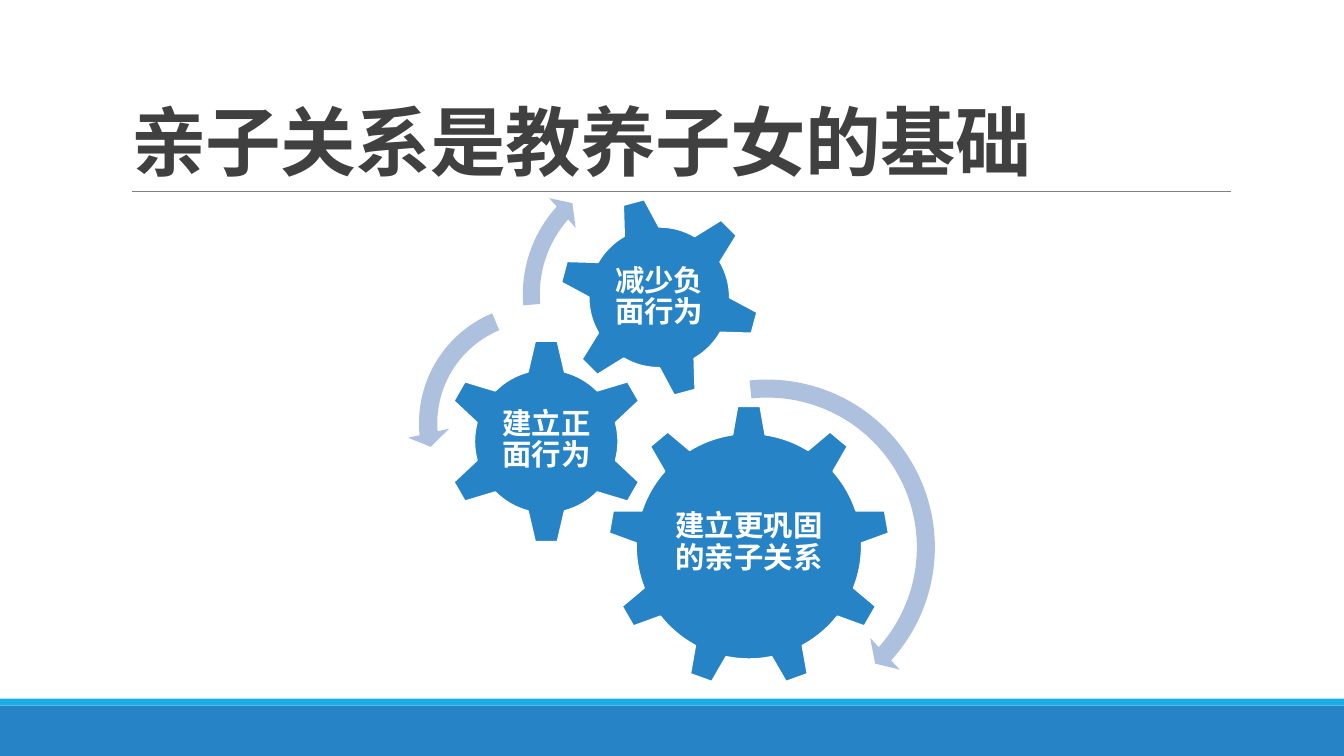
from dataclasses import dataclass

from lxml.etree import SubElement
from pptx import Presentation
from pptx.dml.color import RGBColor as RGB
from pptx.enum.shapes import MSO_CONNECTOR as LINE, MSO_SHAPE as SHAPE
from pptx.enum.text import MSO_ANCHOR as ANCHOR, MSO_AUTO_SIZE as FIT, PP_ALIGN as ALIGN
from pptx.oxml.ns import qn
from pptx.util import Inches, Pt


@dataclass(frozen=True)
class Theme:
    blue: str = "2683C6"
    cyan: str = "1CADE4"
    pale: str = "ADC1DF"
    white: str = "FFFFFF"
    ink: str = "404040"
    rule: str = "808080"
    title_font: str = "Noto Sans CJK SC"
    label_font: str = "Noto Sans CJK JP"
    title_size: float = 54
    label_size: float = 21


T = Theme()
W, H = 13.33, 7.5

# Centre and size in grid units of the diagram box
# kind, centre, size, rotation, label, label size, label shift down
GEARS = [
    (SHAPE.GEAR_9, (3.43, 3.92), 2.8, 0, "建立更巩固的亲子关系", (1.67, 1.44), -0.03),
    (SHAPE.GEAR_6, (1.42, 2.88), 2.04, 0, "建立正面行为", (1.01, 1), -0.01),
    (SHAPE.GEAR_6, (2.54, 1.45), 2, 345, "减少负面行为", (1.12, 1.12), 0),
]
# kind, centre, size, adjustments
ARROWS = [
    (SHAPE.CIRCULAR_ARROW, (3.61, 3.93), 3.58, (0.05, 2.99, 25.26, 158.4, 0.06)),
    (SHAPE.LEFT_CIRCULAR_ARROW, (1.34, 2.7), 2.6, (0.07, 4.3, 104.89, 148.38, 0.08)),
    (SHAPE.CIRCULAR_ARROW, (2.48, 1.42), 2.81, (0.06, 3.94, 133.14, 105.08, 0.07)),
]


def write(tf, text, *, font, size, color, align, anchor, spacing, inset=None, track=None):
    """Put one formatted paragraph into a text frame."""
    tf.word_wrap, tf.auto_size, tf.vertical_anchor = True, FIT.NONE, anchor
    if inset is not None:
        tf.margin_left = tf.margin_right = tf.margin_top = tf.margin_bottom = Inches(inset)
    p = tf.paragraphs[0]
    p.alignment, p.line_spacing = align, spacing
    r = p.add_run()
    r.text = text
    f = r.font
    f.name, f.size, f.bold = font, Pt(size), True
    f.color.rgb = RGB.from_string(color)
    rPr = r._r.get_or_add_rPr()
    SubElement(rPr, qn("a:ea")).set("typeface", font)
    if track is not None:
        rPr.set("spc", str(round(track * 100)))


def add_shape(shapes, kind, box, fill, line=None):
    sp = shapes.add_shape(kind, *map(Inches, box))
    sp.shadow.inherit = False
    sp.fill.solid()
    sp.fill.fore_color.rgb = RGB.from_string(fill)
    if line:
        sp.line.color.rgb = RGB.from_string(line)
        sp.line.width = Pt(1.25)
    else:
        sp.line.fill.background()
    return sp


def add_footer_band(slide, box):
    x, y, w, h = box
    strip = h / 8
    add_shape(slide.shapes, SHAPE.RECTANGLE, (x, y + strip, w, h - strip), T.blue)
    add_shape(slide.shapes, SHAPE.RECTANGLE, (x, y, w, strip), T.cyan)


def add_title(slide, box):
    x, y, w, h = box
    # Rule under the title
    ends = x + 0.01 * w, y + h, x + 1.001 * w, y + h
    rule = slide.shapes.add_connector(LINE.STRAIGHT, *map(Inches, ends))
    rule.line.color.rgb = RGB.from_string(T.rule)
    rule.line.width = Pt(0.5)
    SubElement(rule._element.spPr, qn("a:effectLst"))
    # Title text
    sp = slide.shapes.title
    sp.left, sp.top, sp.width, sp.height = map(Inches, box)
    write(sp.text_frame, "亲子关系是教养子女的基础", font=T.title_font, size=T.title_size,
          color=T.ink, align=ALIGN.LEFT, anchor=ANCHOR.BOTTOM, spacing=0.85, track=-0.5)


def add_gear_diagram(slide, box):
    x, y, w, h = box
    col, row = w / 5.5, h / 6
    shapes = slide.shapes.add_group_shape().shapes

    def centred(centre, width, height, shift=0):
        cx, cy = centre
        return (x + (cx - width / 2) * col, y + (cy + shift - height / 2) * row,
                width * col, height * row)

    # Gears with their labels
    for kind, centre, size, turn, label, label_size, shift in GEARS:
        gear = add_shape(shapes, kind, centred(centre, size, size), T.blue, T.white)
        gear.rotation = turn
        tb = shapes.add_textbox(*map(Inches, centred(centre, *label_size, shift)))
        write(tb.text_frame, label, font=T.label_font, size=T.label_size, color=T.white,
              align=ALIGN.CENTER, anchor=ANCHOR.MIDDLE, spacing=0.9, inset=0.03)

    # Arrows showing the direction of turn
    for kind, centre, size, adjustments in ARROWS:
        arrow = add_shape(shapes, kind, centred(centre, size, size), T.pale)
        for i, value in enumerate(adjustments):
            arrow.adjustments[i] = value


def main():
    prs = Presentation()
    prs.slide_width, prs.slide_height = Inches(W), Inches(H)
    slide = prs.slides.add_slide(prs.slide_layouts[5])
    add_footer_band(slide, (0, 0.924 * H, W, 0.076 * H))
    add_title(slide, (0.09 * W, 0.041 * H, 0.825 * W, 0.212 * H))
    add_gear_diagram(slide, (0.3 * W, 0.2 * H, 0.4125 * W, 0.8 * H))
    prs.save("out.pptx")


if __name__ == "__main__":
    main()
